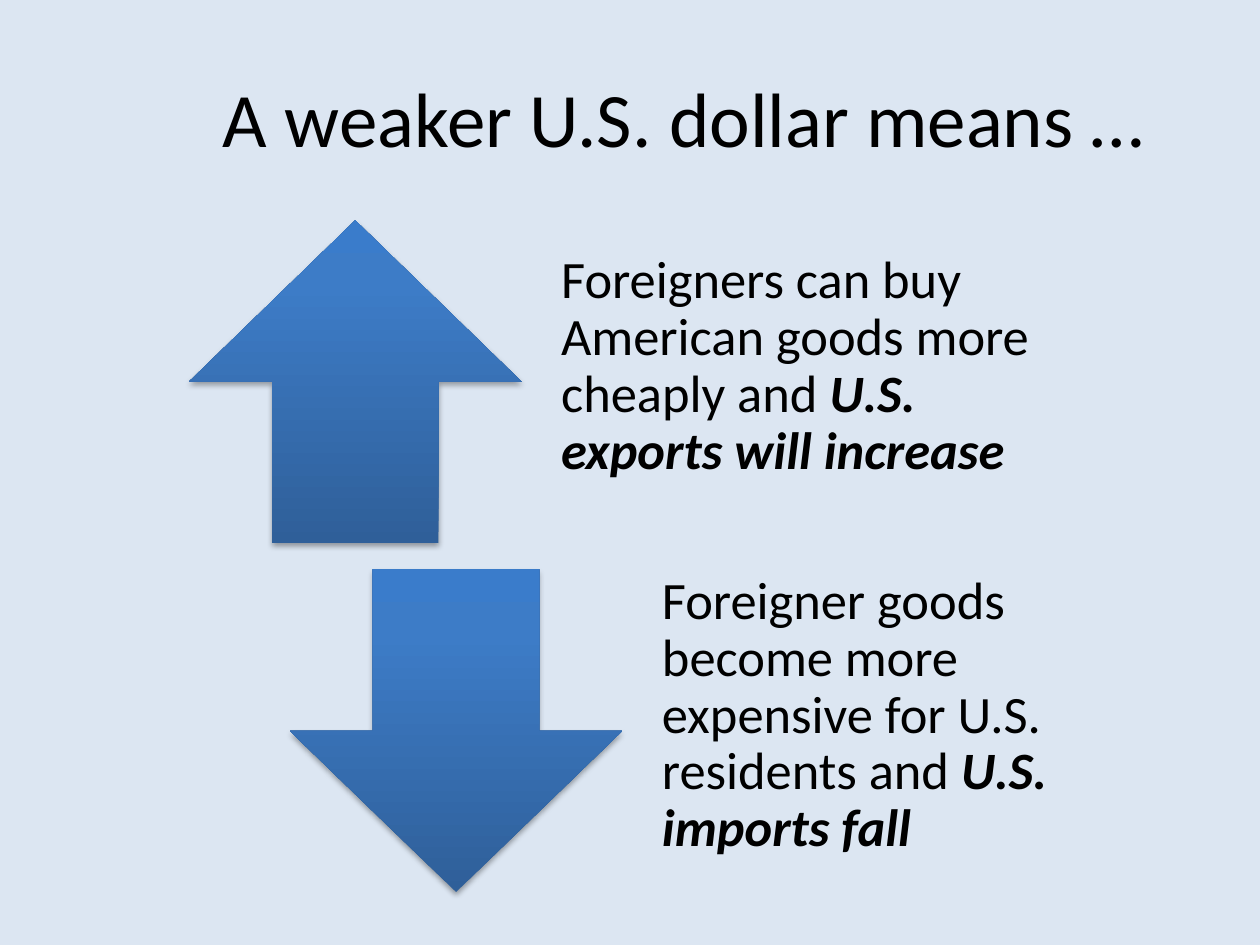
import copy
from dataclasses import dataclass

import pptx
import pptx.dml.color
import pptx.enum.shapes
import pptx.enum.text
import pptx.oxml
import pptx.oxml.ns
import pptx.slide
import pptx.text.text
import pptx.util

Pt = pptx.util.Pt
ArrowShape = pptx.enum.shapes.MSO_SHAPE

FONT = "Calibri"
TEXT_COLOR = "000000"
BACKGROUND = "DCE6F2"
ARROW_STOPS = [(0, "2F5F99"), (0.8, "3D7CC7"), (1, "3A7CCB")]

FIRST_LEFT, FIRST_TOP = 108, 126
STEP_RIGHT, STEP_DOWN = 57.6, 199.44
ROW_HEIGHT = 184.32
ARROW_WIDTH = 190.08
TEXT_OFFSET, TEXT_WIDTH = 195.84, 322.56
TEXT_INSET = 16.8


@dataclass
class Effect:
    arrow: ArrowShape
    explanation: str
    conclusion: str


EFFECTS = [
    Effect(ArrowShape.UP_ARROW,
           "Foreigners can buy American goods more cheaply and ",
           "U.S. exports will increase"),
    Effect(ArrowShape.DOWN_ARROW,
           "Foreigner goods become more expensive for U.S. residents and ",
           "U.S. imports fall"),
]


def color(value: str) -> pptx.dml.color.RGBColor:
    return pptx.dml.color.RGBColor.from_string(value)


def add_run(paragraph: pptx.text.text._Paragraph, text: str, size: float,
            emphasis: bool = False) -> None:
    run = paragraph.add_run()
    run.text = text
    run.font.name = FONT
    run.font.size = Pt(size)
    run.font.color.rgb = color(TEXT_COLOR)
    if emphasis:
        run.font.bold = run.font.italic = True


def add_text_frame(slide: pptx.slide.Slide, left: float, top: float,
                   width: float, height: float) -> pptx.text.text.TextFrame:
    """Add a wrapping, vertically centred text box and return its frame."""
    shape = slide.shapes.add_textbox(Pt(left), Pt(top), Pt(width), Pt(height))
    frame = shape.text_frame
    frame.word_wrap = True
    frame.vertical_anchor = pptx.enum.text.MSO_ANCHOR.MIDDLE
    return frame


def add_title(slide: pptx.slide.Slide, text: str) -> None:
    frame = add_text_frame(slide, 108, 21.6, 576, 90.72)
    paragraph = frame.paragraphs[0]
    paragraph.alignment = pptx.enum.text.PP_ALIGN.CENTER
    add_run(paragraph, text, 44)


def add_arrow(slide: pptx.slide.Slide, kind: ArrowShape,
              left: float, top: float) -> None:
    """Add an arrow with a vertical gradient and a soft shadow below it."""
    shape = slide.shapes.add_shape(
        kind, Pt(left), Pt(top), Pt(ARROW_WIDTH), Pt(ROW_HEIGHT))
    shape.line.fill.background()
    shape.fill.gradient()
    shape.fill.gradient_angle = 90
    properties = shape._element.spPr
    stop_list = properties.find(".//" + pptx.oxml.ns.qn("a:gsLst"))
    stop_list.append(copy.deepcopy(stop_list[-1]))
    for stop, (position, value) in zip(shape.fill.gradient_stops, ARROW_STOPS):
        stop.position = position
        stop.color.rgb = color(value)

    shape.shadow.inherit = False
    effects = properties.find(pptx.oxml.ns.qn("a:effectLst"))
    effects.append(pptx.oxml.parse_xml(
        f'<a:outerShdw {pptx.oxml.ns.nsdecls("a")} blurRad="{Pt(3.1)}" '
        f'dist="{Pt(1.8)}" dir="5400000" rotWithShape="0">'
        '<a:srgbClr val="000000"><a:alpha val="35000"/></a:srgbClr>'
        '</a:outerShdw>'))


def add_effect(slide: pptx.slide.Slide, effect: Effect,
               left: float, top: float) -> None:
    add_arrow(slide, effect.arrow, left, top)
    frame = add_text_frame(
        slide, left + TEXT_OFFSET, top, TEXT_WIDTH, ROW_HEIGHT)
    frame.margin_left = frame.margin_right = Pt(TEXT_INSET)
    frame.margin_top, frame.margin_bottom = 0, Pt(TEXT_INSET)
    paragraph = frame.paragraphs[0]
    paragraph.line_spacing = 0.9
    add_run(paragraph, effect.explanation, 30)
    add_run(paragraph, effect.conclusion, 30, emphasis=True)


def main() -> None:
    presentation = pptx.Presentation()
    presentation.slide_width, presentation.slide_height = Pt(720), Pt(540)
    slide = presentation.slides.add_slide(presentation.slide_layouts[6])
    slide.background.fill.solid()
    slide.background.fill.fore_color.rgb = color(BACKGROUND)

    add_title(slide, "A weaker U.S. dollar means … ")
    for index, effect in enumerate(EFFECTS):
        add_effect(slide, effect, FIRST_LEFT + index * STEP_RIGHT,
                   FIRST_TOP + index * STEP_DOWN)
    presentation.save("out.pptx")


if __name__ == "__main__":
    main()
